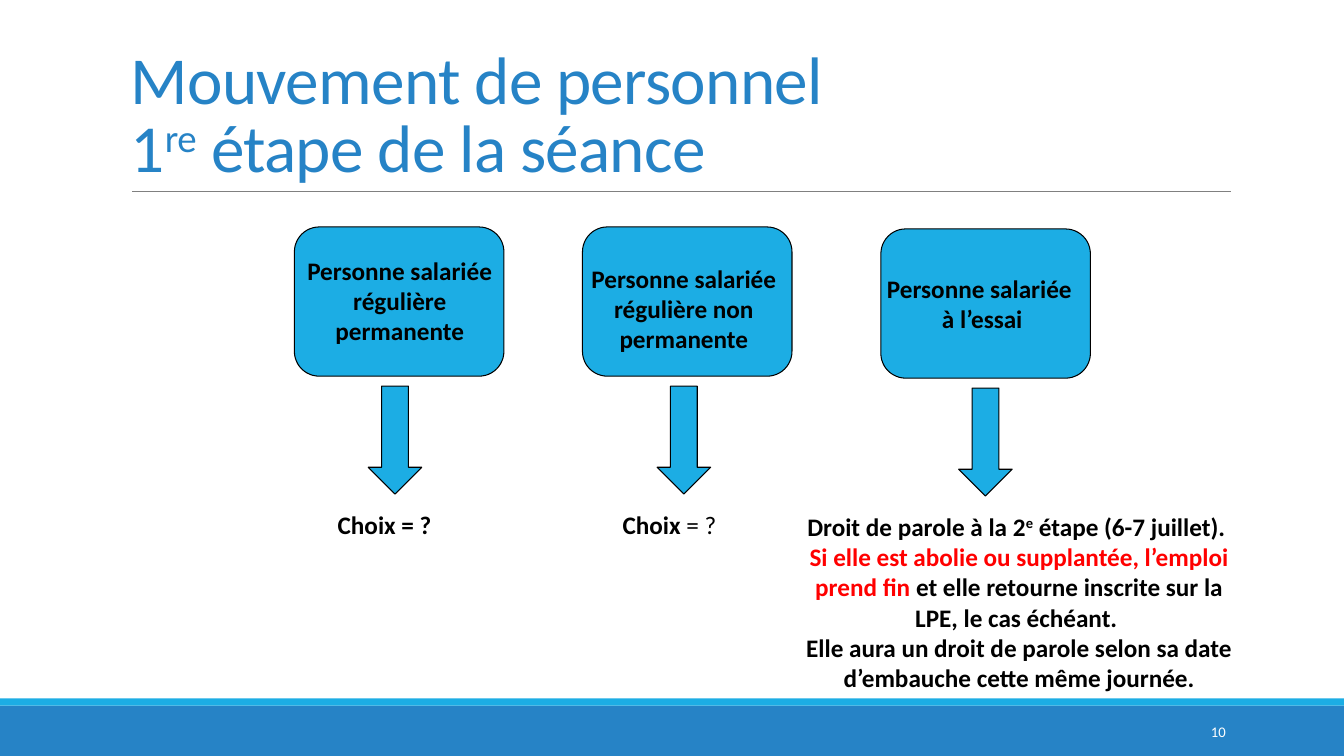
import pptx
import pptx.util
import pptx.dml.color
import pptx.enum.shapes
import pptx.enum.text
import pptx.oxml.ns
import lxml.etree

Cm, Pt = pptx.util.Cm, pptx.util.Pt
SHAPE = pptx.enum.shapes.MSO_SHAPE
ALIGN = pptx.enum.text.PP_ALIGN
ANCHOR = pptx.enum.text.MSO_ANCHOR

BLUE, CYAN, BLACK, RED, WHITE = "2683C6", "1CADE4", "000000", "FF0000", "FFFFFF"


def color(code):
    return pptx.dml.color.RGBColor.from_string(code)


def draw(slide, kind, box, fill, line=None):
    shape = slide.shapes.add_shape(kind, *map(Cm, box))
    shape.shadow.inherit = False
    shape.fill.solid()
    shape.fill.fore_color.rgb = color(fill)
    if line:
        shape.line.color.rgb = color(line)
        shape.line.width = Pt(0.75)
    else:
        shape.line.fill.background()
    return shape


def write(slide, box, runs, size=18, ink=BLACK, bold=None,
          align=ALIGN.LEFT, anchor=ANCHOR.TOP, pitch=None, track=None):
    """Each run is (text, style); style may hold base, ink or bold."""
    frame = slide.shapes.add_textbox(*map(Cm, box)).text_frame
    frame.word_wrap = True
    frame.vertical_anchor = anchor
    para = frame.paragraphs[0]
    para.alignment = align
    para.line_spacing = pitch
    font = para.font
    font.name, font.size, font.bold = "Calibri", Pt(size), bold
    font.color.rgb = color(ink)
    for text, style in runs:
        for n, part in enumerate(text.split("\n")):
            if n:
                para.add_line_break()
            if not part:
                continue
            run = para.add_run()
            run.text = part
            if "ink" in style:
                run.font.color.rgb = color(style["ink"])
            if "bold" in style:
                run.font.bold = style["bold"]
            props = run._r.get_or_add_rPr()
            if "base" in style:
                props.set("baseline", str(style["base"] * 1000))
            if track:
                props.set("spc", str(track))


def header(slide, left, top, width, height):
    runs = [("Mouvement de personnel\n1", {}), ("re", {"base": 30}),
            (" étape de la séance", {})]
    write(slide, (left, top, width, height), runs, 48, BLUE,
          anchor=ANCHOR.BOTTOM, pitch=0.85, track=-50)
    # Rule under the title
    base = Cm(top + height + 0.01)
    rule = slide.shapes.add_connector(
        pptx.enum.shapes.MSO_CONNECTOR.STRAIGHT,
        Cm(left + 0.28), base, Cm(left + width + 0.03), base)
    rule.line.color.rgb = color("808080")
    rule.line.width = Pt(0.5)
    lxml.etree.SubElement(rule._element.spPr, pptx.oxml.ns.qn("a:effectLst"))


def footer(slide, top, width, height):
    draw(slide, SHAPE.RECTANGLE, (0, top, width, height), BLUE)
    draw(slide, SHAPE.RECTANGLE, (0, top - 0.18, width, 0.18), CYAN)
    write(slide, (27.51, top + 0.15, 3.63, 1.02), [("10", {})], 10.5, WHITE,
          align=ALIGN.RIGHT, anchor=ANCHOR.MIDDLE)


def column(slide, left, top, label, shift, stem, runs, place, align):
    # Rounded card and its label
    draw(slide, SHAPE.ROUNDED_RECTANGLE, (left, top, 5.28, 3.76), CYAN, BLACK)
    right, down = shift
    write(slide, (left + right, top + down, 5.51, 2.57), [(label, {})],
          bold=True, align=ALIGN.CENTER)
    # Arrow
    draw(slide, SHAPE.DOWN_ARROW, (left + stem, top + 4.01, 1.35, 2.72),
         CYAN, BLACK)
    # Outcome
    right, width, height = place
    write(slide, (left + right, top + 6.99, width, height), runs,
          bold=True, align=align)


def main():
    deck = pptx.Presentation()
    deck.slide_width, deck.slide_height = Cm(33.87), Cm(19.05)
    slide = deck.slides.add_slide(deck.slide_layouts[6])

    footer(slide, 17.78, 33.87, 1.27)
    header(slide, 3.05, 0.79, 27.94, 4.03)

    column(slide, 7.42, 5.72, "Personne salariée régulière permanente",
           (-0.1, 0.58), 1.86, [("Choix = ?", {})],
           (0.84, 4.24, 1.02), ALIGN.LEFT)
    column(slide, 14.68, 5.72, "Personne salariée régulière non permanente",
           (-0.2, 0.79), 1.88, [("Choix", {}), (" = ?", {"bold": False})],
           (0.76, 4.24, 1.02), ALIGN.LEFT)
    rights = [
        ("Droit de parole à la 2", {}), ("e", {"base": 30}),
        (" étape (6-7 juillet). \n", {}),
        ("Si elle est abolie ou supplantée, l’emploi prend fin ", {"ink": RED}),
        ("et elle retourne inscrite sur la LPE, le cas échéant. \n"
         "Elle aura un droit de parole selon sa date d’embauche "
         "cette même journée.", {})]
    column(slide, 22.2, 5.77, "Personne salariée \nà l’essai",
           (-0.2, 0.99), 1.96, rights, (-2.51, 11.99, 4.88), ALIGN.CENTER)

    deck.save("out.pptx")


if __name__ == "__main__":
    main()
